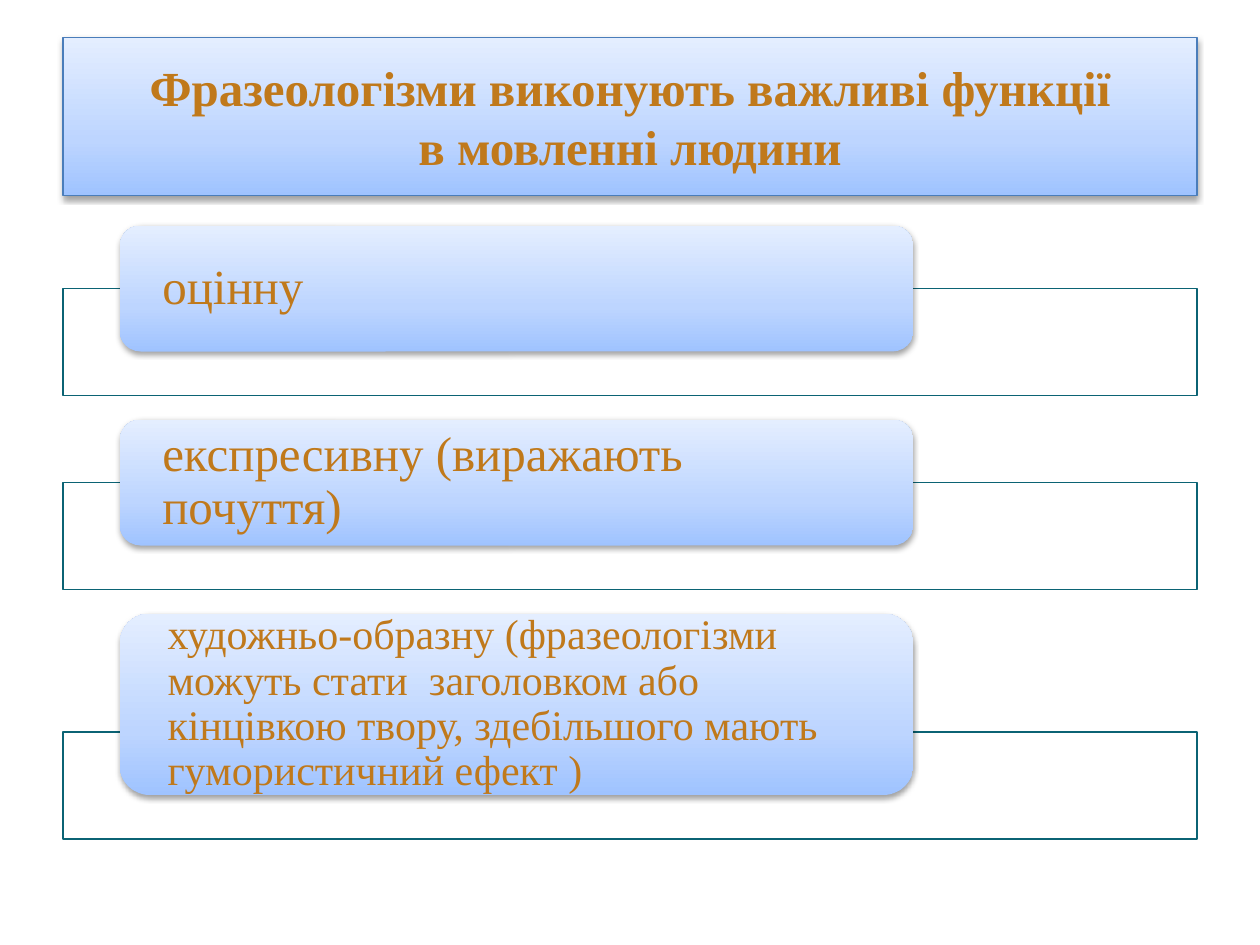
from lxml import etree
from pptx import Presentation
from pptx.dml.color import RGBColor
from pptx.enum import shapes, text
from pptx.oxml import parse_xml
from pptx.oxml.ns import nsdecls, qn
from pptx.util import Inches, Pt

TITLE = "Фразеологізми виконують важливі функції\vв мовленні людини"
# wording, type size, tab height, text inset
ITEMS = [
    ("оцінну", 28, 1, 0.29),
    ("експресивну (виражають почуття)", 28, 1, 0.29),
    ("художньо-образну (фразеологізми можуть стати  заголовком або кінцівкою "
     "твору, здебільшого мають гумористичний ефект )", 24, 1.44, 0.31),
]
THEME = {
    "font": "Times New Roman", "ink": "C0791B", "title": 28,
    "edge": "4A7DBA", "frame": "0B6374", "paper": "FFFFFF",
    "grad": [(0, "9FC3FF"), (35, "BDD5FF"), (100, "E4EEFF")],
}
LEFT, WIDTH = 0.5, 9
TAB_LEFT, TAB_WIDTH = 0.95, 6.3
FIRST, GAP = 1.79, 0.19
FRAME, LAP = 0.85, 0.5  # frame height, and how far a tab reaches into it


def place(shape, *box):
    shape.left, shape.top, shape.width, shape.height = map(Inches, box)


def glow(shape):
    """Give a shape the theme's upward gradient and soft drop shadow."""
    stops = "".join(
        f'<a:gs pos="{pos * 1000}"><a:srgbClr val="{tint}"/></a:gs>'
        for pos, tint in THEME["grad"])
    props = shape._element.spPr
    props.append(parse_xml(
        f'<a:gradFill {nsdecls("a")} rotWithShape="1"><a:gsLst>{stops}</a:gsLst>'
        '<a:lin ang="16200000" scaled="0"/></a:gradFill>'))
    props.append(parse_xml(
        f'<a:effectLst {nsdecls("a")}><a:outerShdw blurRad="40000" dist="20000" '
        'dir="5400000" rotWithShape="0"><a:srgbClr val="000000">'
        '<a:alpha val="37000"/></a:srgbClr></a:outerShdw></a:effectLst>'))


def edge(shape, tint):
    shape.line.color.rgb = RGBColor.from_string(tint)
    shape.line.width = Pt(0.75)


def write(shape, words, size, align, pad, bold=False):
    """Set the words; pad is the side and the top inset."""
    frame = shape.text_frame
    frame.text = words
    frame.word_wrap = True
    frame.auto_size = text.MSO_AUTO_SIZE.NONE
    frame.vertical_anchor = text.MSO_ANCHOR.MIDDLE
    frame.margin_left = frame.margin_right = Inches(pad[0])
    frame.margin_top = frame.margin_bottom = Inches(pad[1])
    para = frame.paragraphs[0]
    para.alignment = align
    font = para.font
    font.name, font.size, font.bold = THEME["font"], Pt(size), bold
    font.color.rgb = RGBColor.from_string(THEME["ink"])
    return para


def add_frame(slide, top):
    box = slide.shapes.add_shape(shapes.MSO_SHAPE.RECTANGLE, 0, 0, 0, 0)
    place(box, LEFT, top, WIDTH, FRAME)
    box.shadow.inherit = False
    box.fill.solid()
    box.fill.fore_color.rgb = RGBColor.from_string(THEME["paper"])
    tint = box._element.spPr.find(qn("a:solidFill"))[0]
    etree.SubElement(tint, qn("a:alpha")).set("val", "89000")
    edge(box, THEME["frame"])


def add_tab(slide, top, words, size, height, inset):
    tab = slide.shapes.add_shape(shapes.MSO_SHAPE.ROUNDED_RECTANGLE, 0, 0, 0, 0)
    place(tab, TAB_LEFT, top, TAB_WIDTH, height)
    glow(tab)
    tab.line.fill.background()
    para = write(tab, words, size, text.PP_ALIGN.LEFT, (inset, 0))
    para.line_spacing = 0.9


def main():
    deck = Presentation()
    deck.slide_width, deck.slide_height = Inches(10), Inches(7.5)
    slide = deck.slides.add_slide(deck.slide_layouts[5])

    title = slide.shapes.title
    place(title, LEFT, 0.3, WIDTH, 1.25)
    glow(title)
    edge(title, THEME["edge"])
    write(title, TITLE, THEME["title"], text.PP_ALIGN.CENTER, (0.1, 0.05), True)

    top = FIRST
    for words, size, height, inset in ITEMS:
        low = top + height - LAP
        add_frame(slide, low)
        add_tab(slide, top, words, size, height, inset)
        top = low + FRAME + GAP

    deck.save("out.pptx")


if __name__ == "__main__":
    main()
